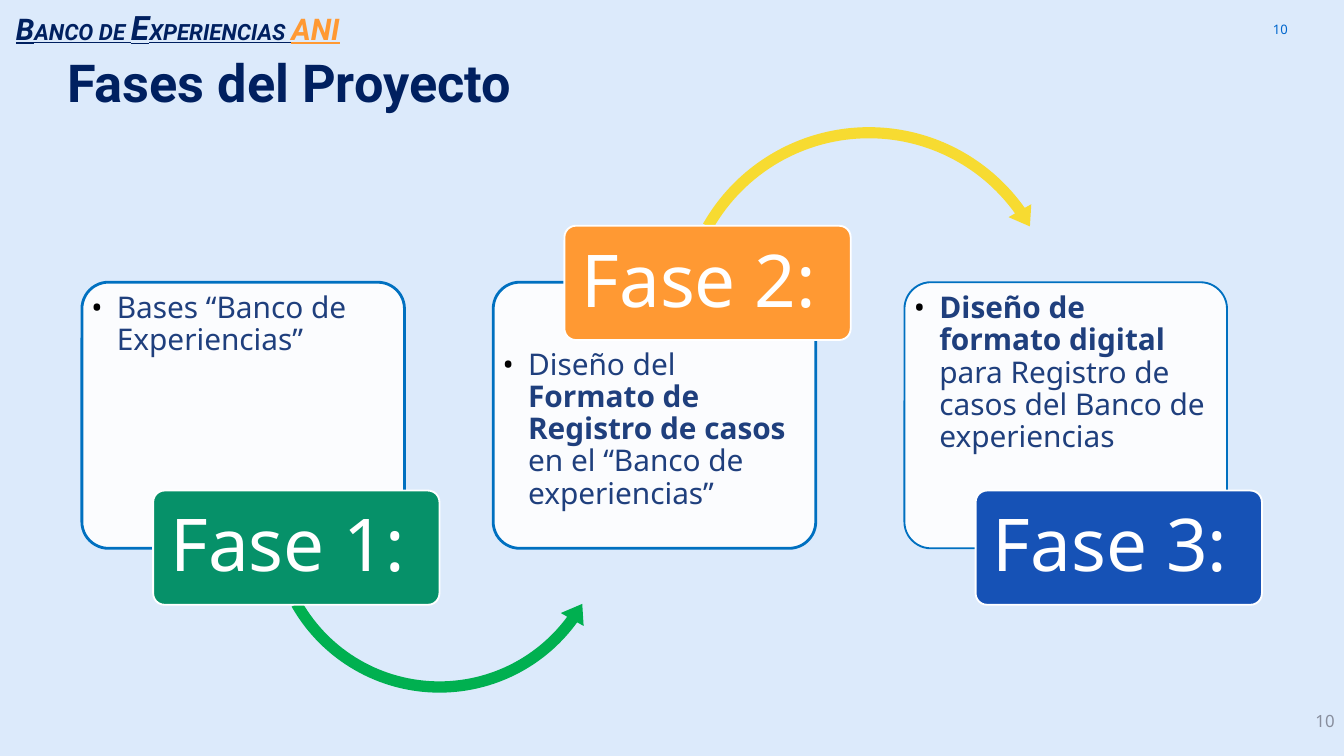
from lxml import etree
from pptx import Presentation
from pptx.dml.color import RGBColor
from pptx.enum.shapes import MSO_SHAPE
from pptx.enum.text import MSO_ANCHOR, PP_ALIGN
from pptx.oxml.ns import qn
from pptx.util import Inches, Pt

ROUNDED = MSO_SHAPE.ROUNDED_RECTANGLE
ARC_UP = MSO_SHAPE.CIRCULAR_ARROW
ARC_DOWN = MSO_SHAPE.LEFT_CIRCULAR_ARROW
TOP, MIDDLE = MSO_ANCHOR.TOP, MSO_ANCHOR.MIDDLE
LEFT, CENTER, RIGHT = PP_ALIGN.LEFT, PP_ALIGN.CENTER, PP_ALIGN.RIGHT

BACKGROUND = RGBColor(0xDC, 0xEA, 0xFB)
NAVY = RGBColor(0x00, 0x20, 0x60)
TEXT_BLUE = RGBColor(0x1F, 0x3F, 0x7D)
BORDER_BLUE = RGBColor(0x00, 0x70, 0xC0)
NUMBER_BLUE = RGBColor(0x00, 0x66, 0xCD)
GREY = RGBColor(0x88, 0x8E, 0x9D)
WHITE = RGBColor(0xFF, 0xFF, 0xFF)
GREEN = RGBColor(0x06, 0x91, 0x69)
ARROW_GREEN = RGBColor(0x00, 0xB0, 0x50)
ORANGE = RGBColor(0xFF, 0x99, 0x33)
YELLOW = RGBColor(0xF7, 0xDB, 0x31)
BLUE = RGBColor(0x16, 0x52, 0xB6)

BODY_FONT, HEAD_FONT = "Noto Sans", "Roboto"
FIRST_LEFT, PHASE_STEP = 0.61, 3.06

PHASES = [
    ("Fase 1: ", GREEN, 1.5, False, [("Bases “Banco de Experiencias”", False)]),
    ("Fase 2: ", ORANGE, 1.5, True, [
        ("Diseño del ", False),
        ("Formato de Registro de casos ", True),
        ("en el “Banco de experiencias”", False)]),
    ("Fase 3: ", BLUE, 1, False, [
        ("Diseño de formato digital ", True),
        ("para Registro de casos del Banco de experiencias", False)]),
]

HEADER = [("B", 16, NAVY), ("ANCO DE ", 12, NAVY), ("E", 18, NAVY),
          ("XPERIENCIAS ", 12, NAVY), ("ANI", 16, ORANGE)]


def add_text(s, x, y, w, h, inset=(0.1, 0.05), anchor=MIDDLE, align=LEFT, spacing=None):
    tf = s.shapes.add_textbox(Inches(x), Inches(y), Inches(w), Inches(h)).text_frame
    tf.word_wrap = True
    tf.vertical_anchor = anchor
    tf.margin_left = tf.margin_right = Inches(inset[0])
    tf.margin_top = tf.margin_bottom = Inches(inset[1])
    p = tf.paragraphs[0]
    p.alignment = align
    if spacing:
        p.line_spacing = spacing
    return p


def add_run(p, text, size, color, font=BODY_FONT, bold=False):
    r = p.add_run()
    r.text = text
    r.font.size = Pt(size)
    r.font.name = font
    r.font.bold = bold
    r.font.color.rgb = color
    return r


def add_bullet(p):
    pPr = p._p.get_or_add_pPr()
    pPr.set("marL", str(Inches(0.19)))
    pPr.set("indent", str(-Inches(0.19)))
    color = etree.SubElement(pPr, qn("a:buClr"))
    etree.SubElement(color, qn("a:srgbClr"), val="000000")
    etree.SubElement(pPr, qn("a:buFont"), typeface=BODY_FONT)
    etree.SubElement(pPr, qn("a:buChar"), char="•")


def add_filled(s, kind, x, y, w, h, fill, adjustments):
    sp = s.shapes.add_shape(kind, Inches(x), Inches(y), Inches(w), Inches(h))
    sp.shadow.inherit = False
    sp.fill.solid()
    sp.fill.fore_color.rgb = fill
    sp.line.fill.background()
    for i, value in enumerate(adjustments):
        sp.adjustments[i] = value
    return sp


def add_box(s, x, y, w, h, fill, border, width):
    sp = add_filled(s, ROUNDED, x, y, w, h, fill, [0.1])
    sp.line.color.rgb = border
    sp.line.width = Pt(width)
    return sp


def add_card(s, x, width, label_on_top, runs):
    card = add_box(s, x, 2.1, 2.4, 1.98, WHITE, BORDER_BLUE, width)
    color = card.fill._xPr.find(qn("a:solidFill"))[0]
    etree.SubElement(color, qn("a:alpha"), val="90000")
    y = 2.57 if label_on_top else 2.15
    p = add_text(s, x + 0.04, y, 2.3, 1.46, (0.03, 0.03), TOP, spacing=0.9)
    add_bullet(p)
    for text, bold in runs:
        add_run(p, text, 16, TEXT_BLUE, bold=bold)


def add_label(s, x, y, text, fill):
    add_box(s, x, y, 2.13, 0.85, fill, WHITE, 1)
    p = add_text(s, x + 0.03, y + 0.03, 2.08, 0.8, (0.08, 0.05), align=CENTER, spacing=0.9)
    add_run(p, text, 39, WHITE)


def add_header(s):
    p = add_text(s, 0.02, 0, 5, 0.4, anchor=TOP)
    for text, size, color in HEADER:
        r = add_run(p, text, size, color, HEAD_FONT, True)
        r.font.italic = True
        r.font.underline = True


def main():
    prs = Presentation()
    prs.slide_width = Inches(10)
    prs.slide_height = Inches(10 * 9 / 16)
    s = prs.slides.add_slide(prs.slide_layouts[6])
    s.background.fill.solid()
    s.background.fill.fore_color.rgb = BACKGROUND

    add_run(add_text(s, 9.08, 0, 0.6, 0.43, (0.1, 0.1), align=RIGHT), "10", 7, NUMBER_BLUE)
    add_run(add_text(s, 7.75, 5.21, 2.25, 0.3, (0.07, 0.04), align=RIGHT), "10", 9, GREY)
    title = add_text(s, 0.43, 0.42, 8.6, 0.43, (0.07, 0.04), spacing=0.9)
    add_run(title, "Fases del Proyecto", 28, NAVY, HEAD_FONT, True)

    arrows = [
        (ARC_DOWN, 1.95, 2.57, 2.64, ARROW_GREEN, [0.032, 3.895, 21.65, 90.245, 0.037]),
        (ARC_UP, 4.99, 0.89, 2.95, YELLOW, [0.028, 3.464, 194.781, 125.755, 0.033]),
    ]
    for i, (label, color, width, label_on_top, runs) in enumerate(PHASES):
        x = FIRST_LEFT + i * PHASE_STEP
        add_card(s, x, width, label_on_top, runs)
        if i < len(arrows):
            kind, left, top, size, fill, adjustments = arrows[i]
            add_filled(s, kind, left, top, size, size, fill, adjustments)
        add_label(s, x + 0.53, 1.68 if label_on_top else 3.65, label, color)

    add_header(s)
    prs.save("out.pptx")


if __name__ == "__main__":
    main()
